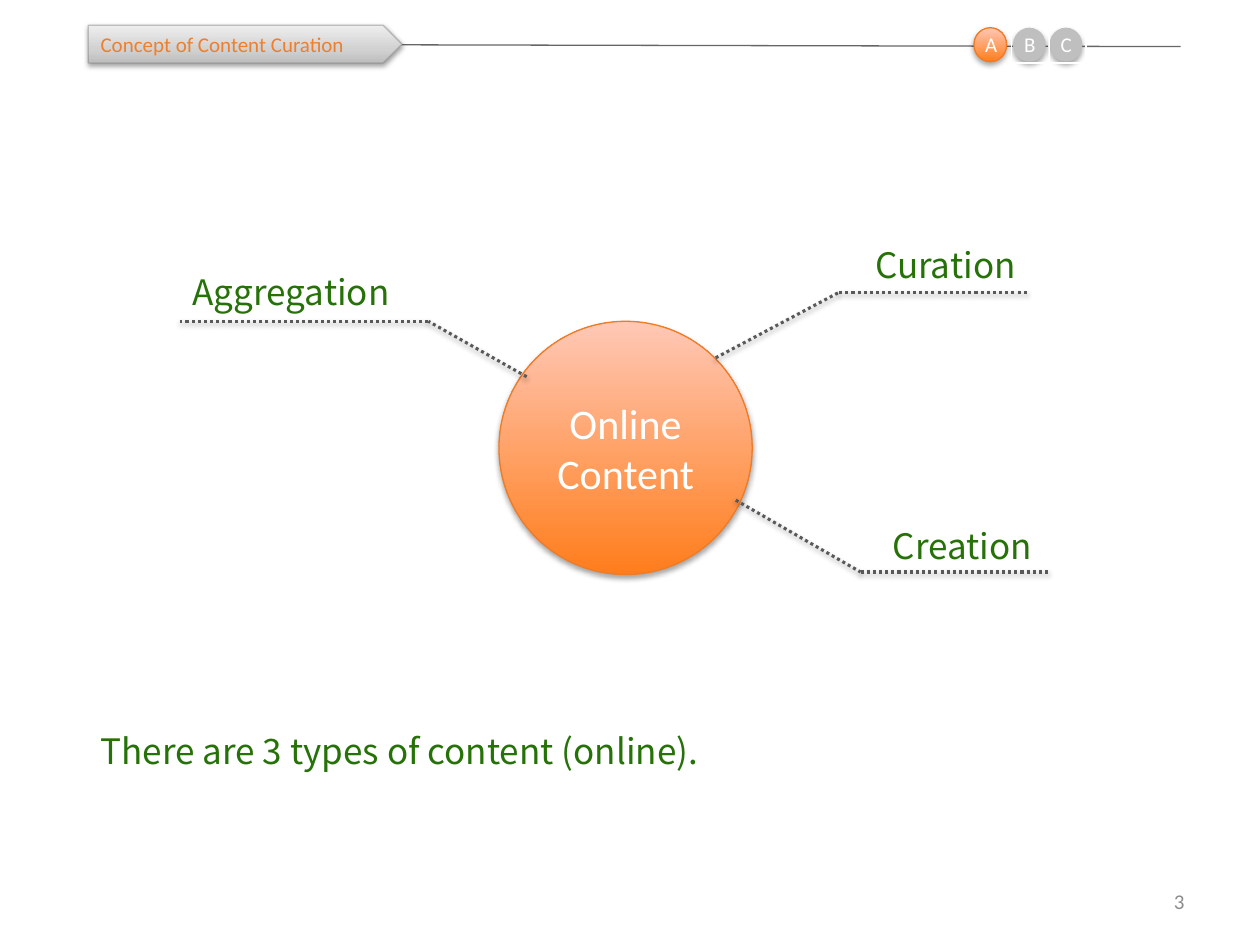
from lxml import etree
from pptx import Presentation
from pptx.dml.color import RGBColor
from pptx.enum.dml import MSO_LINE
from pptx.enum.shapes import MSO_CONNECTOR, MSO_SHAPE
from pptx.enum.text import MSO_ANCHOR, PP_ALIGN
from pptx.oxml.ns import qn
from pptx.util import Inches, Pt

OVAL, PENTAGON = MSO_SHAPE.OVAL, MSO_SHAPE.PENTAGON
STRAIGHT, DOTTED = MSO_CONNECTOR.STRAIGHT, MSO_LINE.ROUND_DOT
LEFT, CENTER, RIGHT = PP_ALIGN.LEFT, PP_ALIGN.CENTER, PP_ALIGN.RIGHT
TOP, MIDDLE = MSO_ANCHOR.TOP, MSO_ANCHOR.MIDDLE

# Grid of 100 columns by 75 rows on a 10 x 7.5 inch slide
CELL = Inches(10) / 100
LATIN, WIDE = "Calibri", "Noto Sans CJK JP"
WHITE, GREEN, ORANGE, GREY = "FFFFFF", "267209", "EE7B26", "BFBFBF"
ORANGE_FADE = [(0, "FF7D1C"), (100, "FFC8B6")]
GREY_FADE = [(0, "BDBDBD"), (35, "D1D1D1"), (100, "EEEEEE")]
# Shadow: opacity in percent, blur and distance in points
SOFT, FIRM = (35, 3.1, 1.8), (38, 3.1, 1.6)

SMALL = {"size": Pt(12), "name": LATIN}
LABEL = {"size": Pt(20), "name": WIDE}
LARGE = {"size": Pt(24), "name": LATIN}


def grid(*cells):
    return [round(c * CELL) for c in cells]


def rgb(hex_text):
    return RGBColor.from_string(hex_text)


def add_color(parent, color, opacity=100):
    clr = etree.SubElement(parent, qn("a:srgbClr"), val=color)
    if opacity < 100:
        etree.SubElement(clr, qn("a:alpha"), val=str(opacity * 1000))


def set_shadow(sp, shadow=None):
    effects = etree.SubElement(sp._element.spPr, qn("a:effectLst"))
    if shadow:
        opacity, blur, dist = shadow
        outer = etree.SubElement(
            effects, qn("a:outerShdw"), blurRad=str(Pt(blur)),
            dist=str(Pt(dist)), dir="5400000", rotWithShape="0")
        add_color(outer, "000000", opacity)


def set_fill(sp, fill):
    if isinstance(fill, str):
        sp.fill.solid()
        sp.fill.fore_color.rgb = rgb(fill)
        return
    sp.fill.gradient()
    sp.fill.gradient_angle = 90
    stops = sp._element.spPr.find(".//" + qn("a:gsLst"))
    for old in list(stops):
        stops.remove(old)
    for pos, color in fill:
        add_color(etree.SubElement(stops, qn("a:gs"), pos=str(pos * 1000)), color)


def set_line(sp, color, opacity=100):
    if color is None:
        sp.line.fill.background()
        return
    sp.line.width = Pt(0.75)
    sp.line.color.rgb = rgb(color)
    if opacity < 100:
        solid = sp.line._ln.find(qn("a:solidFill"))
        solid.clear()
        add_color(solid, color, opacity)


def set_text(sp, text, font, color, align=LEFT, anchor=TOP):
    tf = sp.text_frame
    tf.word_wrap = True
    tf.vertical_anchor = anchor
    p = tf.paragraphs[0]
    p.alignment = align
    r = p.add_run()
    r.text = text
    for key, value in font.items():
        setattr(r.font, key, value)
    r.font.color.rgb = rgb(color)
    # The same face for East Asian text
    etree.SubElement(r._r.get_or_add_rPr(), qn("a:ea"), typeface=font["name"])


def add_shape(s, kind, box, fill, line, shadow, opacity=100):
    sp = s.shapes.add_shape(kind, *grid(*box))
    set_fill(sp, fill)
    set_line(sp, line, opacity)
    set_shadow(sp, shadow)
    return sp


def add_text(s, box, *text_format):
    sp = s.shapes.add_textbox(*grid(*box))
    set_text(sp, *text_format)
    return sp


def add_line(s, start, end, color, width, dash=None, shadow=None):
    cxn = s.shapes.add_connector(STRAIGHT, *grid(*start, *end))
    cxn.line.color.rgb = rgb(color)
    cxn.line.width = Pt(width)
    if dash:
        cxn.line.dash_style = dash
    set_shadow(cxn, shadow)


def add_badge(s, letter, left, active=False):
    fill, line = (ORANGE_FADE, ORANGE) if active else (GREY, None)
    add_shape(s, OVAL, (left, 2.2, 2.6, 2.7), fill, line, SOFT)
    sp = add_text(s, (left - 0.1, 2, 3, 3), letter, SMALL, WHITE)
    if not active:
        set_line(sp, WHITE)


def add_header(s):
    add_line(s, (7, 3.5), (93.7, 3.7), "666666", 0.75)
    for letter, left in (("A", 77.3), ("C", 83.3), ("B", 80.4)):
        add_badge(s, letter, left, active=letter == "A")
    sp = add_shape(s, PENTAGON, (7, 2, 24.9, 3), GREY_FADE, "808080", FIRM, 43)
    set_text(sp, "Concept of Content Curation", SMALL, "EF7F2C", LEFT, MIDDLE)


def add_branch(s, text, box, align, hub, elbow, end):
    add_text(s, box, text, LABEL, GREEN, align)
    for start, stop in ((hub, elbow), (elbow, end)):
        add_line(s, start, stop, "595959", 1.75, DOTTED, FIRM)


def main():
    prs = Presentation()
    prs.slide_width, prs.slide_height = grid(100, 75)
    s = prs.slides.add_slide(prs.slide_layouts[6])

    # Statement and header
    add_text(s, (7, 55.4, 79.3, 8.3), "There are 3 types of content (online).",
             LABEL, GREEN, LEFT, MIDDLE)
    add_header(s)

    # Page number
    add_text(s, (71.7, 69.5, 23.3, 4), "3", SMALL, "8C8C8C", RIGHT, MIDDLE)

    # Hub and its branches
    hub = add_shape(s, OVAL, (39.6, 25.5, 20.1, 20.1), ORANGE_FADE, ORANGE, SOFT)
    set_text(hub, "Online Content", LARGE, WHITE, CENTER, MIDDLE)
    branches = [
        ("Curation", (66.6, 18.8, 15, 4.4), RIGHT,
         (56.8, 28.4), (66.6, 23.2), (81.6, 23.2)),
        ("Aggregation", (14.3, 21, 20.8, 4.4), LEFT,
         (41.8, 29.9), (34, 25.5), (14.3, 25.5)),
        ("Creation", (66.6, 41.1, 16.3, 4.4), RIGHT,
         (58.4, 39.7), (68.3, 45.4), (83.2, 45.4)),
    ]
    for branch in branches:
        add_branch(s, *branch)

    prs.save("out.pptx")


if __name__ == "__main__":
    main()
